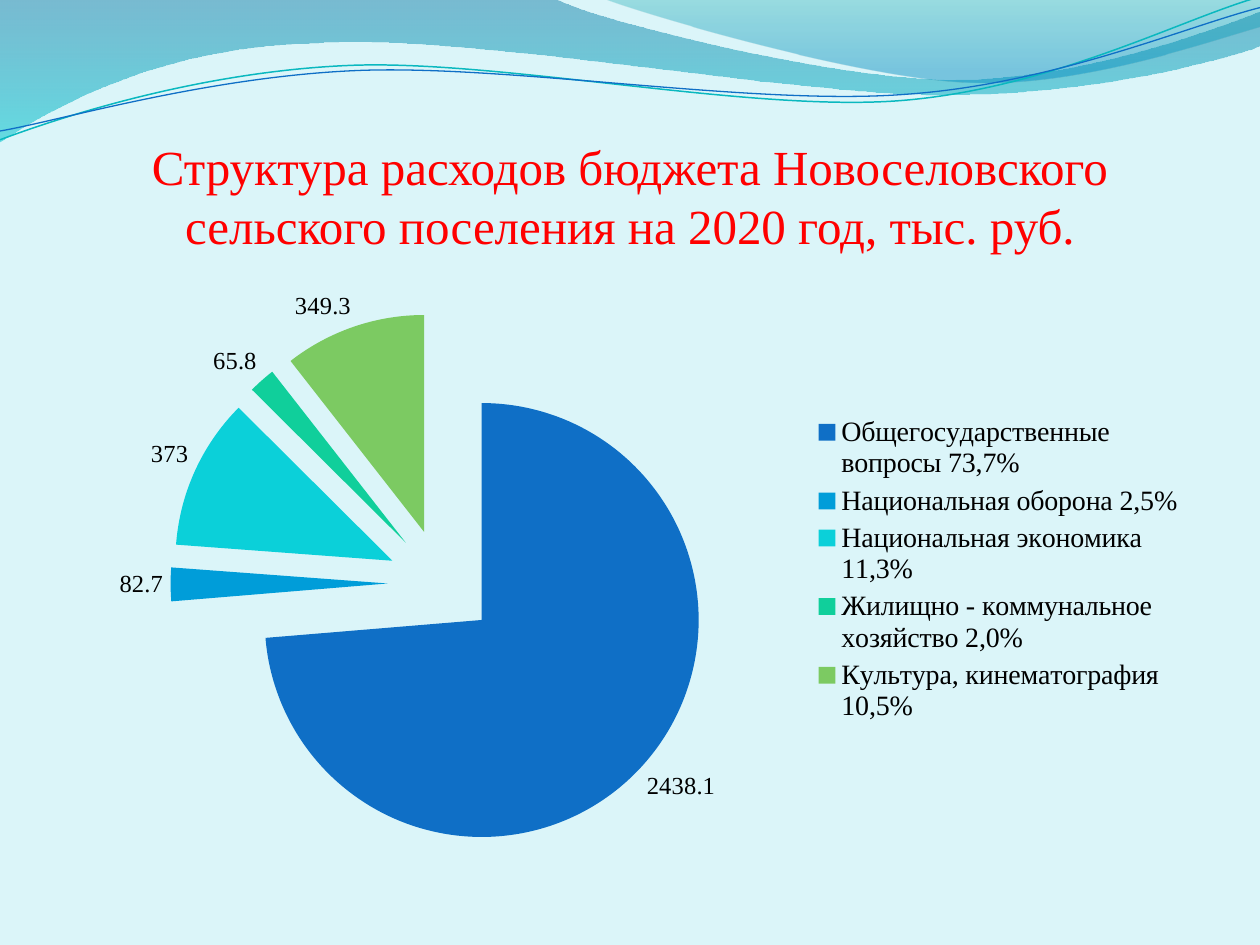
import math
import pptx
import pptx.chart.data
import pptx.dml.color
import pptx.enum.chart
import pptx.enum.text
import pptx.oxml
import pptx.oxml.ns
import pptx.util

Inches = pptx.util.Inches
Pt = pptx.util.Pt
RGB = pptx.dml.color.RGBColor

PALE = RGB(0xDB, 0xF5, 0xF9)
RED = RGB(0xFF, 0x00, 0x00)
BLACK = RGB(0x00, 0x00, 0x00)
DEEP = RGB(0x00, 0x74, 0xA1)
AQUA = RGB(0x00, 0xC6, 0xCF)
TEAL = RGB(0x00, 0xA1, 0xA9)
AZURE = RGB(0x00, 0x8B, 0xBF)
CYAN = RGB(0x0A, 0xB8, 0xBF)
BLUE = RGB(0x0F, 0x6F, 0xC6)
SLICES = [BLUE, RGB(0x00, 0x9D, 0xD9), RGB(0x0B, 0xD0, 0xD9),
          RGB(0x10, 0xCF, 0x9B), RGB(0x7C, 0xCA, 0x62)]
SERIF = "Times New Roman"
BASE = "TeX Gyre Pagella"
TILT = 357.3

TITLE = ("Структура расходов бюджета Новоселовского "
         "сельского поселения на 2020 год, тыс. руб.")
COSTS = {
    "Общегосударственные вопросы 73,7%": 2438.1,
    "Национальная оборона 2,5%": 82.7,
    "Национальная экономика 11,3%": 373,
    "Жилищно - коммунальное хозяйство 2,0%": 65.8,
    "Культура, кинематография 10,5%": 349.3,
}

BANDS = [
    ((-0.01, -0.01, 10.02, 1.14),
     [(0, 0), (4.4, -0.01), (4.76, 0.17, 6.64, 0.63, 7.58, 0.63),
      (8.53, 0.63, 9.58, 0.26, 10, 0.09), (10.01, 0.36),
      (9.83, 0.44, 8.7, 0.76, 7.46, 0.75), (6.22, 0.75, 3.82, 0.28, 2.57, 0.34),
      (1.29, 0.36, 0.46, 0.83, -0.01, 1.13), (0, 0)],
     [(0, DEEP, 45), (1, AQUA, 55)]),
    ((4.79, -0.01, 5.21, 0.7),
     [(4.79, -0.01), (5.09, 0.11, 6.82, 0.62, 7.69, 0.65),
      (8.56, 0.69, 9.61, 0.32, 10, 0.21), (10, 0), (4.79, -0.01)],
     [(0, TEAL, 30), (0.8, AZURE, 45)]),
]
CURVES = [
    ((-0.02, 0.22, 10.02, 0.71),
     [(0, 1.11), (0.48, 0.93, 1.58, 0.57, 2.77, 0.52),
      (3.95, 0.47, 5.93, 0.89, 7.13, 0.8), (8.33, 0.71, 9.38, 0.15, 9.98, -0.02)],
     CYAN, 0.85),
    ((-0.02, 0.3, 10.03, 0.58),
     [(0, 1.04), (0.47, 0.96, 1.64, 0.61, 2.83, 0.56),
      (4.03, 0.51, 5.97, 0.84, 7.17, 0.75), (8.36, 0.67, 9.41, 0.21, 10, 0.06)],
     BLUE, 0.75),
]


def style(item, **form):
    """Set each format value on the item."""
    for name, value in form.items():
        setattr(item, name, value)


def local(dot, box, tilt):
    """Return a point in the frame of a tilted box."""
    left, top, width, height = box
    x, y = dot[0] - left - width / 2, dot[1] - top - height / 2
    turn = math.radians(-tilt)
    return (Inches(x * math.cos(turn) - y * math.sin(turn) + width / 2),
            Inches(x * math.sin(turn) + y * math.cos(turn) + height / 2))


def outline(slide, origin, box, steps, close, tilt=0):
    """Draw straight and cubic steps in a box set off from the origin."""
    groups = [[local(step[i:i + 2], box, tilt) for i in range(0, len(step), 2)]
              for step in steps]
    pen = slide.shapes.build_freeform(*groups[0][0])
    pen.add_line_segments([group[-1] for group in groups[1:]], close=close)
    shape = pen.convert_to_shape()
    left, top, width, height = map(Inches, box)
    style(shape, left=origin[0] + left, top=origin[1] + top,
          width=width, height=height, rotation=tilt)
    shape.shadow.inherit = False
    route = shape.element.spPr.find(".//" + pptx.oxml.ns.qn("a:path"))
    route.set("w", str(width))
    route.set("h", str(height))
    for node, group in zip(list(route), groups):
        tag = "cubicBezTo" if len(group) == 3 else node.tag.split("}")[1]
        dots = "".join(f'<a:pt x="{x}" y="{y}"/>' for x, y in group)
        route.replace(node, pptx.oxml.parse_xml(
            f'<a:{tag} {pptx.oxml.ns.nsdecls("a")}>{dots}</a:{tag}>'))
    return shape


def add_waves(slide, box):
    """Draw the shaded bands and thin curves at the top."""
    for area, steps, stops in BANDS:
        shape = outline(slide, box, area, steps, True)
        shape.line.fill.background()
        shape.fill.gradient()
        shape.fill.gradient_angle = 270
        for stop, (place, color, _) in zip(shape.fill.gradient_stops, stops):
            stop.position = place
            stop.color.rgb = color
        tints = shape.element.spPr.findall(".//" + pptx.oxml.ns.qn("a:srgbClr"))
        for tint, (_, _, share) in zip(tints, stops):
            tint.append(pptx.oxml.parse_xml(
                f'<a:alpha {pptx.oxml.ns.nsdecls("a")} val="{share * 1000}"/>'))
    for area, steps, color, width in CURVES:
        shape = outline(slide, box, area, steps, False, TILT)
        shape.fill.background()
        shape.line.color.rgb = color
        shape.line.width = Pt(width)


def add_title(slide, box):
    """Write the heading at the foot of its box."""
    frame = slide.shapes.add_textbox(*box).text_frame
    style(frame, word_wrap=True, vertical_anchor=pptx.enum.text.MSO_ANCHOR.BOTTOM,
          margin_left=0, margin_right=0, margin_top=Inches(0.05), margin_bottom=0)
    para = frame.paragraphs[0]
    para.alignment = pptx.enum.text.PP_ALIGN.CENTER
    run = para.add_run()
    run.text = TITLE
    style(run.font, size=Pt(28), name=SERIF)
    run.font.color.rgb = RED


def add_pie(slide, box):
    """Chart the costs as a split pie with a legend."""
    data = pptx.chart.data.CategoryChartData()
    data.categories = list(COSTS)
    data.add_series("Series 1", list(COSTS.values()))
    kind = pptx.enum.chart.XL_CHART_TYPE.PIE_EXPLODED
    chart = slide.shapes.add_chart(kind, *box, data).chart
    style(chart, has_title=False, has_legend=True)
    style(chart.legend, include_in_layout=False,
          position=pptx.enum.chart.XL_LEGEND_POSITION.RIGHT)
    plot = chart.plots[0]
    style(plot, vary_by_categories=True, has_data_labels=True)
    labels = plot.data_labels
    style(labels, show_value=True, show_percentage=False,
          position=pptx.enum.chart.XL_LABEL_POSITION.OUTSIDE_END)
    for part, size, name in ((chart, 18, BASE), (chart.legend, 16, SERIF),
                             (labels, 14, SERIF)):
        style(part.font, size=Pt(size), name=name)
        part.font.color.rgb = BLACK
    for i, color in enumerate(SLICES):
        fill = plot.series[0].points[i].format.fill
        fill.solid()
        fill.fore_color.rgb = color


def main():
    """Build the slide and save it."""
    deck = pptx.Presentation()
    style(deck, slide_width=Inches(10), slide_height=Inches(7.5))
    slide = deck.slides.add_slide(deck.slide_layouts[6])
    slide.background.fill.solid()
    slide.background.fill.fore_color.rgb = PALE
    regions = [
        (add_waves, (0, 0, 10, 1.14)),
        (add_title, (0.5, 0.77, 9, 1.25)),
        (add_pie, (0.5, 2.12, 9, 4.8)),
    ]
    for draw, box in regions:
        draw(slide, [Inches(side) for side in box])
    deck.save("out.pptx")


if __name__ == "__main__":
    main()
